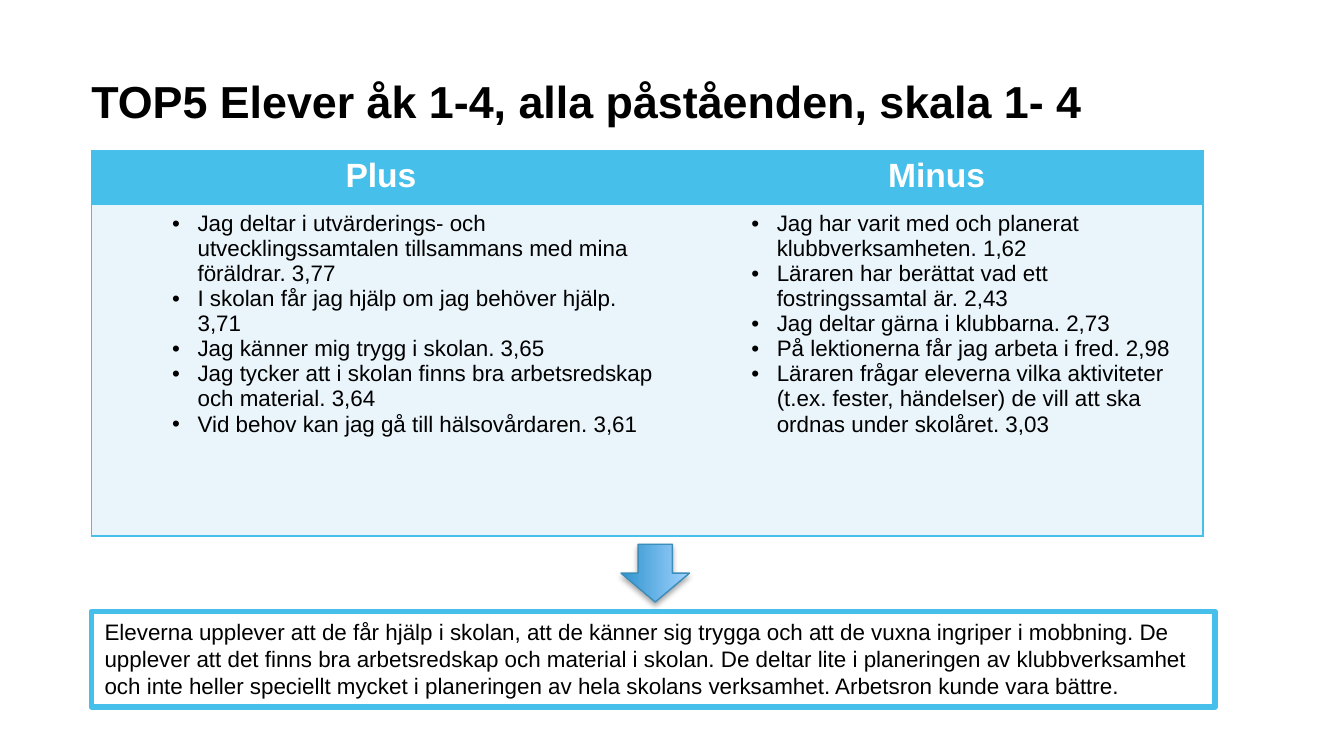
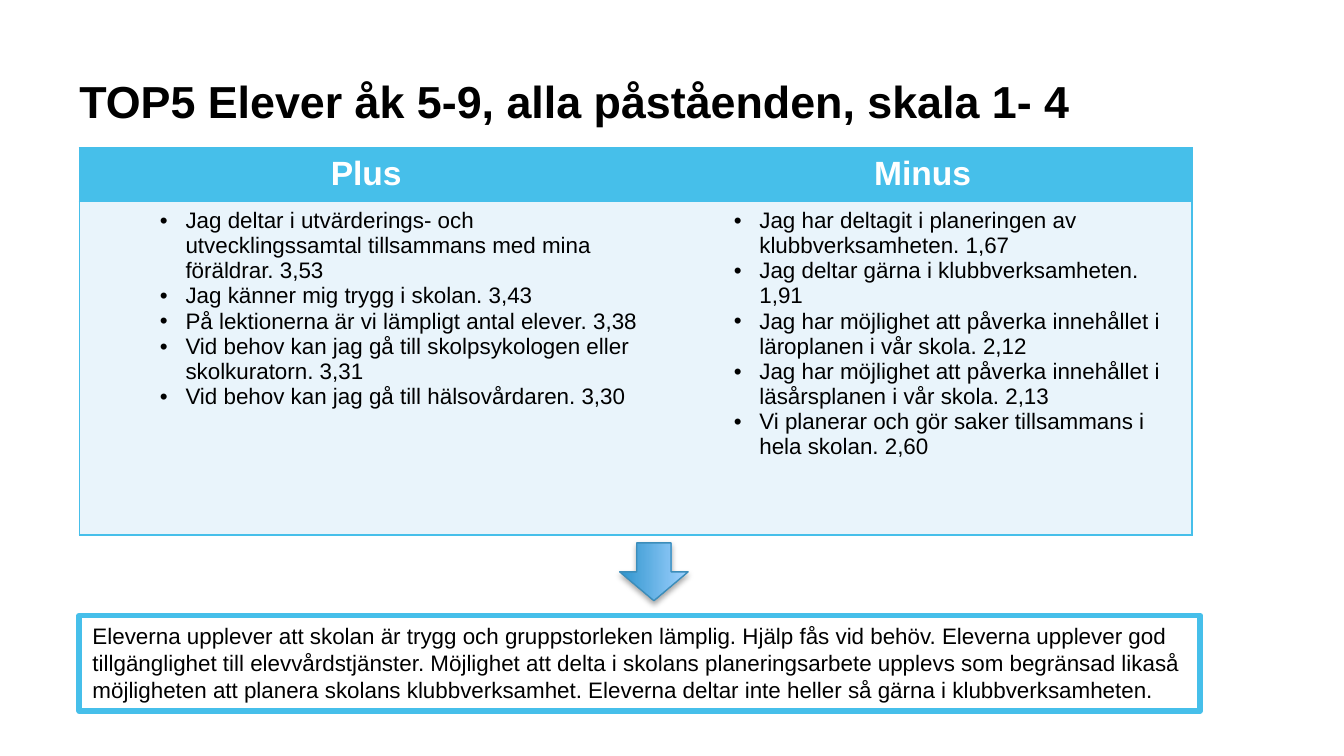
from dataclasses import dataclass

from lxml.etree import SubElement
from pptx import Presentation
from pptx.dml.color import RGBColor
from pptx.enum.shapes import MSO_SHAPE
from pptx.enum.text import MSO_ANCHOR, PP_ALIGN
from pptx.oxml.ns import qn
from pptx.util import Inches, Pt


@dataclass(frozen=True)
class Theme:
    font: str = "Arial"
    title_size: int = 24
    header_size: int = 18
    body_size: int = 12
    black: str = "000000"
    white: str = "FFFFFF"
    accent: str = "46BFEA"
    pale: str = "E9F4FB"
    arrow_dark: str = "2E94CD"
    arrow_light: str = "A1D2FF"
    arrow_line: str = "3C8DBA"


theme = Theme()
rgb = RGBColor.from_string


def style_text(paragraph, size, color, bold=False):
    font = paragraph.font
    font.name, font.size, font.bold = theme.font, Pt(size), bold
    font.color.rgb = rgb(color)


def set_borders(cell, outer_sides):
    """Line the given sides in the accent colour and clear the others."""
    properties = cell._tc.get_or_add_tcPr()
    for side in "LRTB":
        line = SubElement(properties, qn(f"a:ln{side}"), w=str(Pt(1)))
        if side in outer_sides:
            fill = SubElement(line, qn("a:solidFill"))
            SubElement(fill, qn("a:srgbClr"), val=theme.accent)
        else:
            SubElement(line, qn("a:noFill"))


# A header row of height 0 grows to fit its text.
surveys = [
    {
        "title": "TOP5 Elever åk 1-4, alla påståenden, skala 1- 4",
        "left": 0.68, "title_width": 8.96,
        "table_top": 1.12, "columns": (4.31, 3.96), "rows": (0.4, 2.47),
        "arrow": (4.66, 4.01), "summary_top": 4.55, "summary_width": 8.36,
        "Plus": [
            "Jag deltar i utvärderings- och utvecklingssamtalen tillsammans med mina föräldrar. 3,77",
            "I skolan får jag hjälp om jag behöver hjälp. 3,71",
            "Jag känner mig trygg i skolan. 3,65",
            "Jag tycker att i skolan finns bra arbetsredskap och material. 3,64",
            "Vid behov kan jag gå till hälsovårdaren. 3,61",
        ],
        "Minus": [
            "Jag har varit med och planerat klubbverksamheten. 1,62",
            "Läraren har berättat vad ett fostringssamtal är. 2,43",
            "Jag deltar gärna i klubbarna. 2,73",
            "På lektionerna får jag arbeta i fred. 2,98",
            "Läraren frågar eleverna vilka aktiviteter (t.ex. fester, händelser) "
            "de vill att ska ordnas under skolåret. 3,03",
        ],
        "summary": "Eleverna upplever att de får hjälp i skolan, att de känner sig trygga och att "
        "de vuxna ingriper i mobbning. De upplever att det finns bra arbetsredskap och material "
        "i skolan. De deltar lite i planeringen av klubbverksamhet och inte heller speciellt "
        "mycket i planeringen av hela skolans verksamhet. Arbetsron kunde vara bättre.",
    },
    {
        "title": "TOP5 Elever åk 5-9, alla påståenden, skala 1- 4",
        "left": 0.59, "title_width": 8.28,
        "table_top": 1.1, "columns": (4.27, 4.01), "rows": (0, 2.48),
        "arrow": (4.65, 4), "summary_top": 4.58, "summary_width": 8.34,
        "Plus": [
            "Jag deltar i utvärderings- och utvecklingssamtal tillsammans med mina föräldrar. 3,53",
            "Jag känner mig trygg i skolan. 3,43",
            "På lektionerna är vi lämpligt antal elever. 3,38",
            "Vid behov kan jag gå till skolpsykologen eller skolkuratorn. 3,31",
            "Vid behov kan jag gå till hälsovårdaren. 3,30",
        ],
        "Minus": [
            "Jag har deltagit i planeringen av klubbverksamheten. 1,67",
            "Jag deltar gärna i klubbverksamheten. 1,91",
            "Jag har möjlighet att påverka innehållet i läroplanen i vår skola. 2,12",
            "Jag har möjlighet att påverka innehållet i läsårsplanen i vår skola. 2,13",
            "Vi planerar och gör saker tillsammans i hela skolan. 2,60",
        ],
        "summary": "Eleverna upplever att skolan är trygg och gruppstorleken lämplig. Hjälp fås "
        "vid behöv. Eleverna upplever god tillgänglighet till elevvårdstjänster. Möjlighet att "
        "delta i skolans planeringsarbete upplevs som begränsad likaså möjligheten att planera "
        "skolans klubbverksamhet. Eleverna deltar inte heller så gärna i klubbverksamheten.",
    },
]

deck = Presentation()
deck.slide_width = Inches(10)
deck.slide_height = deck.slide_width * 9 // 16

for survey in surveys:
    page = deck.slides.add_slide(deck.slide_layouts[6])
    left = Inches(survey["left"])

    # Title
    title = page.shapes.add_textbox(left, Inches(0.18), Inches(survey["title_width"]), Inches(0.77))
    frame = title.text_frame
    frame.word_wrap = True
    frame.vertical_anchor = MSO_ANCHOR.BOTTOM
    frame.margin_left = frame.margin_top = frame.margin_bottom = 0
    paragraph = frame.paragraphs[0]
    paragraph.text = survey["title"]
    paragraph.line_spacing = Pt(33)
    style_text(paragraph, theme.title_size, theme.black, bold=True)

    # Plus and minus table
    table = page.shapes.add_table(
        2, 2, left, Inches(survey["table_top"]),
        Inches(sum(survey["columns"])), Inches(sum(survey["rows"])),
    ).table
    table.first_row = table.horz_banding = False
    for row, height in zip(table.rows, survey["rows"]):
        row.height = Inches(height)
    for index, (heading, side) in enumerate((("Plus", "L"), ("Minus", "R"))):
        table.columns[index].width = Inches(survey["columns"][index])
        header, body = table.cell(0, index), table.cell(1, index)
        for cell, color in ((header, theme.accent), (body, theme.pale)):
            set_borders(cell, "TB" + side)
            cell.fill.solid()
            cell.fill.fore_color.rgb = rgb(color)

        paragraph = header.text_frame.paragraphs[0]
        paragraph.text = heading
        paragraph.alignment = PP_ALIGN.CENTER
        style_text(paragraph, theme.header_size, theme.white, bold=True)

        body.text_frame.text = "\n".join(survey[heading])
        for paragraph in body.text_frame.paragraphs:
            paragraph.level = 1
            style_text(paragraph, theme.body_size, theme.black)
            properties = paragraph._p.get_or_add_pPr()
            properties.set("marL", str(Inches(0.69)))
            properties.set("indent", str(Inches(-0.19)))
            bullet_font = properties.makeelement(qn("a:buFont"), {"typeface": theme.font})
            bullet = properties.makeelement(qn("a:buChar"), {"char": "•"})
            properties.insert(0, bullet_font)
            properties.insert(1, bullet)

    # Summary
    box = page.shapes.add_shape(
        MSO_SHAPE.RECTANGLE, left, Inches(survey["summary_top"]),
        Inches(survey["summary_width"]), Inches(0.71),
    )
    box.shadow.inherit = False
    box.fill.solid()
    box.fill.fore_color.rgb = rgb(theme.white)
    box.line.color.rgb = rgb(theme.accent)
    box.line.width = Pt(3)
    box.text_frame.word_wrap = True
    box.text_frame.vertical_anchor = MSO_ANCHOR.TOP
    paragraph = box.text_frame.paragraphs[0]
    paragraph.text = survey["summary"]
    paragraph.alignment = PP_ALIGN.LEFT
    style_text(paragraph, theme.body_size, theme.black)

    # Arrow from table to summary
    arrow_left, arrow_top = survey["arrow"]
    arrow = page.shapes.add_shape(
        MSO_SHAPE.RIGHT_ARROW, Inches(arrow_left), Inches(arrow_top), Inches(0.43), Inches(0.51)
    )
    arrow.rotation = 90
    arrow.fill.gradient()
    arrow.fill.gradient_angle = 90
    for stop, color in zip(arrow.fill.gradient_stops, (theme.arrow_dark, theme.arrow_light)):
        stop.color.rgb = rgb(color)
    arrow.line.color.rgb = rgb(theme.arrow_line)
    arrow.line.width = Pt(0.75)
    arrow.shadow.inherit = False
    effects = arrow._element.spPr.find(qn("a:effectLst"))
    shadow = SubElement(
        effects, qn("a:outerShdw"), blurRad=str(Pt(3.1)), dist=str(Pt(1.8)),
        dir="5400000", rotWithShape="0",
    )
    shadow_color = SubElement(shadow, qn("a:srgbClr"), val=theme.black)
    SubElement(shadow_color, qn("a:alpha"), val="35000")

deck.save("out.pptx")
